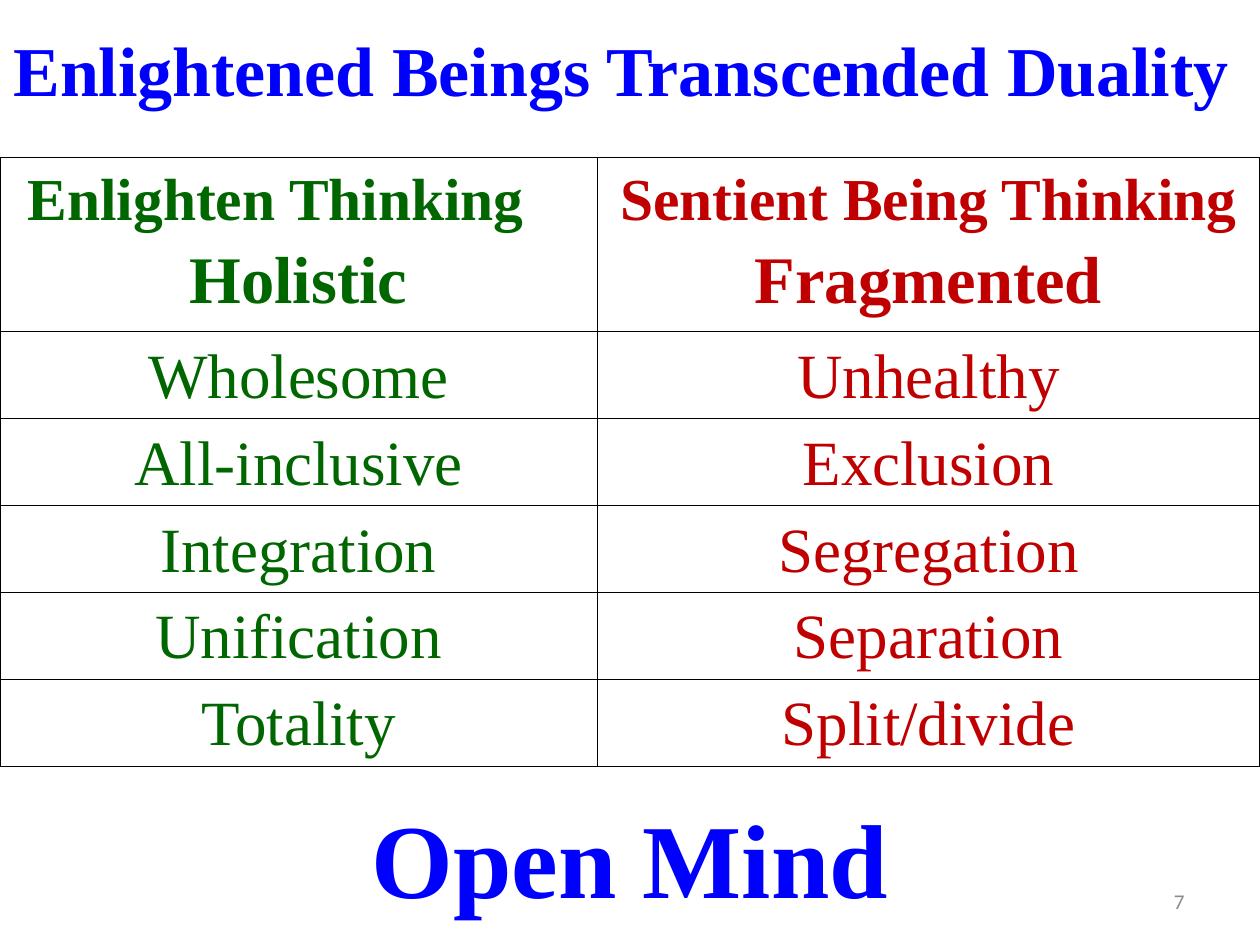
"""Build the slide contrasting enlightened and sentient thinking."""
import pptx
import pptx.dml.color
import pptx.enum.text
import pptx.oxml
import pptx.oxml.ns
import pptx.util
from dataclasses import dataclass

Cm = pptx.util.Cm
Align = pptx.enum.text.PP_ALIGN
Anchor = pptx.enum.text.MSO_ANCHOR


@dataclass(frozen=True)
class Theme:
    serif: str = "Times New Roman"
    sans: str = "Calibri"
    blue: str = "0000FF"
    green: str = "006600"
    red: str = "C00000"
    grey: str = "898989"
    border: str = "000000"
    title_size: int = 40
    closing_size: int = 60
    heading_size: int = 34
    contrast_size: int = 38
    body_size: int = 36
    number_size: int = 12


THEME = Theme()
TITLE = "Enlightened Beings Transcended Duality "
CLOSING = "Open Mind"
PAGE_NUMBER = "7"
COLUMNS = [
    {
        "heading": "Enlighten Thinking",
        "heading_format": {"align": Align.LEFT, "indent": 0.38},
        "contrast": "Holistic",
        "color": THEME.green,
        "width": 12.04,
        "qualities": ["Wholesome", "All-inclusive", "Integration", "Unification", "Totality"],
    },
    {
        "heading": "Sentient Being Thinking",
        "heading_format": {},
        "contrast": "Fragmented",
        "color": THEME.red,
        "width": 13.36,
        "qualities": ["Unhealthy", "Exclusion", "Segregation", "Separation", "Split/divide"],
    },
]
PAGE_WIDTH, PAGE_HEIGHT = 25.4, 19.05
TABLE_TOP, ROW_HEIGHT, HEADER_ROWS = 3.18, 1.75, 2
CELL_INSET = 0.18


def write(para, text, *, size, color, font=THEME.serif, bold=False,
          align=Align.CENTER, spacing=None, indent=0):
    """Write one formatted span of text into a paragraph."""
    if indent:
        para._p.get_or_add_pPr().set("marL", str(Cm(indent)))
    para.alignment = align
    para.line_spacing = spacing
    span = para.add_run()
    span.text = text
    span.font.name = font
    span.font.size = pptx.util.Pt(size)
    span.font.bold = bold
    span.font.color.rgb = pptx.dml.color.RGBColor.from_string(color)


def add_text(page, text, left, top, width, height, anchor=Anchor.TOP, **text_format):
    """Add a wrapping text box holding one paragraph."""
    box = page.shapes.add_textbox(Cm(left), Cm(top), Cm(width), Cm(height))
    box.text_frame.word_wrap = True
    box.text_frame.vertical_anchor = anchor
    write(box.text_frame.paragraphs[0], text, **text_format)


def style_cell(cell):
    """Give a cell its insets, thin borders and no fill."""
    cell.margin_left = cell.margin_right = Cm(CELL_INSET)
    cell.margin_top = cell.margin_bottom = 0
    properties = cell._tc.get_or_add_tcPr()
    for side in "LRTB":
        properties.append(pptx.oxml.parse_xml(
            f'<a:ln{side} {pptx.oxml.ns.nsdecls("a")} w="12700"><a:solidFill>'
            f'<a:srgbClr val="{THEME.border}"/></a:solidFill></a:ln{side}>'))
    cell.fill.background()


def add_comparison(page):
    """Add the table with one column for each way of thinking."""
    row_count = 1 + len(COLUMNS[0]["qualities"])
    table = page.shapes.add_table(
        row_count, len(COLUMNS), 0, Cm(TABLE_TOP), Cm(PAGE_WIDTH),
        Cm(ROW_HEIGHT * (row_count - 1 + HEADER_ROWS))).table
    table.first_row = table.horz_banding = False
    for index, row in enumerate(table.rows):
        row.height = Cm(ROW_HEIGHT * (1 if index else HEADER_ROWS))
    for index, column in enumerate(COLUMNS):
        table.columns[index].width = Cm(column["width"])
        shared = {"color": column["color"], "spacing": 1.15}
        header = table.cell(0, index)
        style_cell(header)
        write(header.text_frame.paragraphs[0], column["heading"], bold=True,
              size=THEME.heading_size, **shared, **column["heading_format"])
        write(header.text_frame.add_paragraph(), column["contrast"], bold=True,
              size=THEME.contrast_size, **shared)
        for number, quality in enumerate(column["qualities"], start=1):
            cell = table.cell(number, index)
            style_cell(cell)
            write(cell.text_frame.paragraphs[0], quality, size=THEME.body_size, **shared)


def main():
    """Create the deck and save it."""
    deck = pptx.Presentation()
    deck.slide_width, deck.slide_height = Cm(PAGE_WIDTH), Cm(PAGE_HEIGHT)
    page = deck.slides.add_slide(deck.slide_layouts[6])
    add_text(page, PAGE_NUMBER, 18.2, 17.66, 5.93, 1.01, anchor=Anchor.MIDDLE,
             size=THEME.number_size, color=THEME.grey, font=THEME.sans, align=Align.RIGHT)
    add_text(page, TITLE, 0, 0.42, PAGE_WIDTH, 1.97,
             size=THEME.title_size, color=THEME.blue, bold=True)
    add_comparison(page)
    add_text(page, CLOSING, 0, 15.88, PAGE_WIDTH, 2.82,
             size=THEME.closing_size, color=THEME.blue, bold=True)
    deck.save("out.pptx")


if __name__ == "__main__":
    main()
